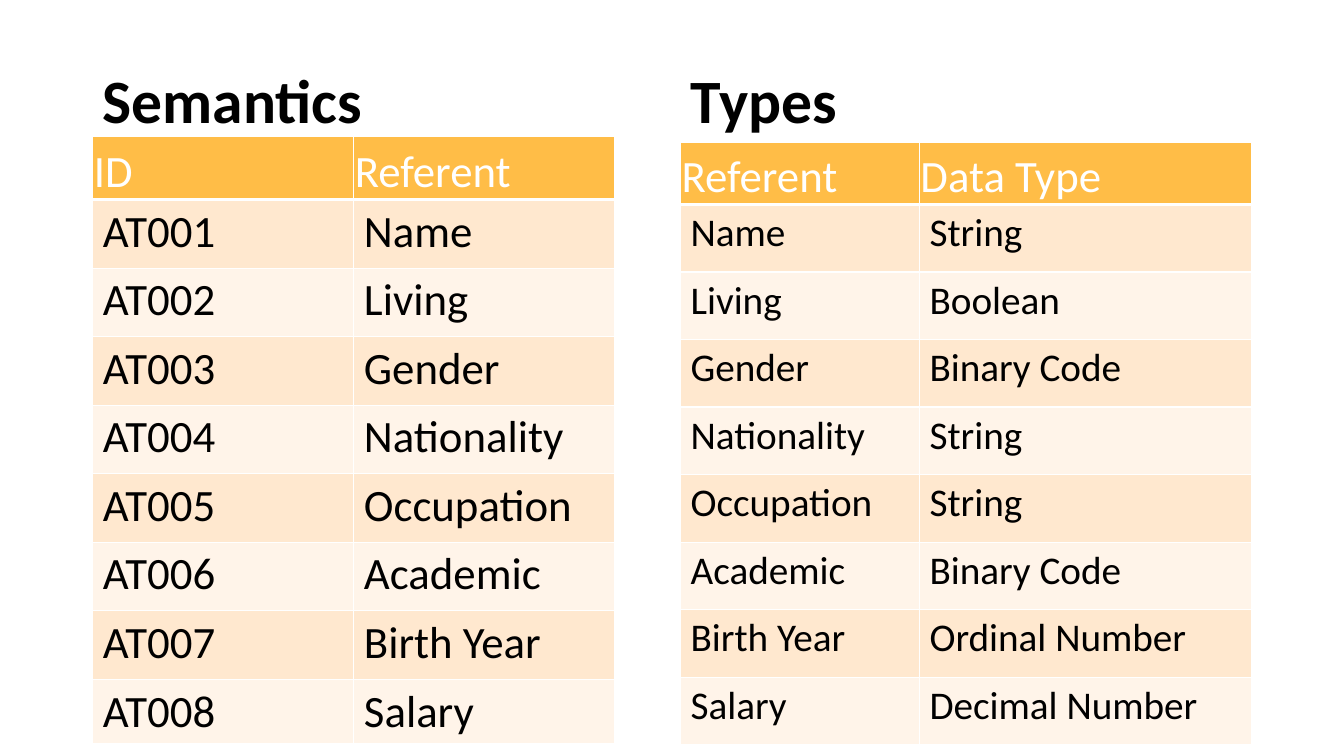
from lxml.etree import SubElement
from pptx import Presentation
from pptx.dml.color import RGBColor
from pptx.enum.text import MSO_ANCHOR
from pptx.oxml.ns import qn
from pptx.util import Inches, Pt

COLORS = {"header": "FFBD47", "odd": "FFE8CF", "even": "FFF4E9",
          "ink": "000000", "paper": "FFFFFF"}
HEADER_CELL = {"margin_left": Inches(0.01), "margin_right": Inches(0.01),
               "margin_top": Inches(0.01), "margin_bottom": 0,
               "vertical_anchor": MSO_ANCHOR.BOTTOM}
TITLE_FRAME = {"word_wrap": True, "vertical_anchor": MSO_ANCHOR.BOTTOM}
TITLE_PARA = {"line_spacing": 0.9, "space_before": Pt(10)}

REFERENTS = ["Name", "Living", "Gender", "Nationality", "Occupation",
             "Academic", "Birth Year", "Salary"]
DATA_TYPES = ["String", "Boolean", "Binary Code", "String", "String",
              "Binary Code", "Ordinal Number", "Decimal Number"]
IDS = [f"AT{number:03}" for number in range(1, len(REFERENTS) + 1)]

PANELS = [
    {"title": "Semantics", "box": (0.92, 0.51, 5.64, 0.9), "table_top": 0.84,
     "columns": [2.59, 2.59], "row_heights": [0.63] + [0.68] * 7 + [0.58],
     "body_size": 32,
     "rows": [("ID", "Referent"), *zip(IDS, REFERENTS)]},
    {"title": "Types", "box": (6.75, 0.51, 5.67, 0.9), "table_top": 0.9,
     "columns": [2.37, 3.29], "row_heights": [0.62] + [0.67] * 8,
     "body_size": 28,
     "rows": [("Referent", "Data Type"), *zip(REFERENTS, DATA_TYPES)]},
]


def apply_format(target, values):
    """Set each named attribute on the target."""
    for name, value in values.items():
        setattr(target, name, value)


def write_text(para, text, size, color, bold=False):
    """Add one formatted span to a paragraph."""
    span = para.add_run()
    span.text = text
    apply_format(span.font, {"name": "Calibri", "size": Pt(size), "bold": bold})
    span.font.color.rgb = RGBColor.from_string(COLORS[color])


def add_borders(cell, bottom_width):
    """Draw white lines on the four sides of a cell."""
    properties = cell._tc.get_or_add_tcPr()
    widths = {"a:lnL": 1, "a:lnR": 1, "a:lnT": 1, "a:lnB": bottom_width}
    for side, width in widths.items():
        line = SubElement(properties, qn(side), w=str(Pt(width)))
        fill = SubElement(line, qn("a:solidFill"))
        SubElement(fill, qn("a:srgbClr"), val=COLORS["paper"])


def fill_cell(cell, text, row, body_size):
    """Write, border and colour a cell according to its row."""
    is_header = row == 0
    if is_header:
        apply_format(cell, HEADER_CELL)
    add_borders(cell, 3 if is_header else 1)
    shade = "header" if is_header else "odd" if row % 2 else "even"
    cell.fill.solid()
    cell.fill.fore_color.rgb = RGBColor.from_string(COLORS[shade])
    write_text(cell.text_frame.paragraphs[0], text,
               32 if is_header else body_size, "paper" if is_header else "ink")


def add_title(page, title, box):
    """Place a bold heading at the bottom of the box."""
    frame = page.shapes.add_textbox(*map(Inches, box)).text_frame
    apply_format(frame, TITLE_FRAME)
    para = frame.paragraphs[0]
    apply_format(para, TITLE_PARA)
    write_text(para, title, 44, "ink", bold=True)


def add_panel(page, title, box, table_top, columns, row_heights, body_size, rows):
    """Place a heading with its table below."""
    add_title(page, title, box)
    left, top = box[:2]
    area = (left, top + table_top, sum(columns), sum(row_heights))
    table = page.shapes.add_table(len(rows), len(columns), *map(Inches, area)).table
    for column, width in zip(table.columns, columns):
        column.width = Inches(width)
    for index, (height, texts) in enumerate(zip(row_heights, rows)):
        table.rows[index].height = Inches(height)
        for cell, text in zip(table.rows[index].cells, texts):
            fill_cell(cell, text, index, body_size)


def main():
    """Build the slide and save it."""
    deck = Presentation()
    apply_format(deck, {"slide_width": Inches(13.33), "slide_height": Inches(7.5)})
    page = deck.slides.add_slide(deck.slide_layouts[6])
    for panel in PANELS:
        add_panel(page, **panel)
    deck.save("out.pptx")


if __name__ == "__main__":
    main()
